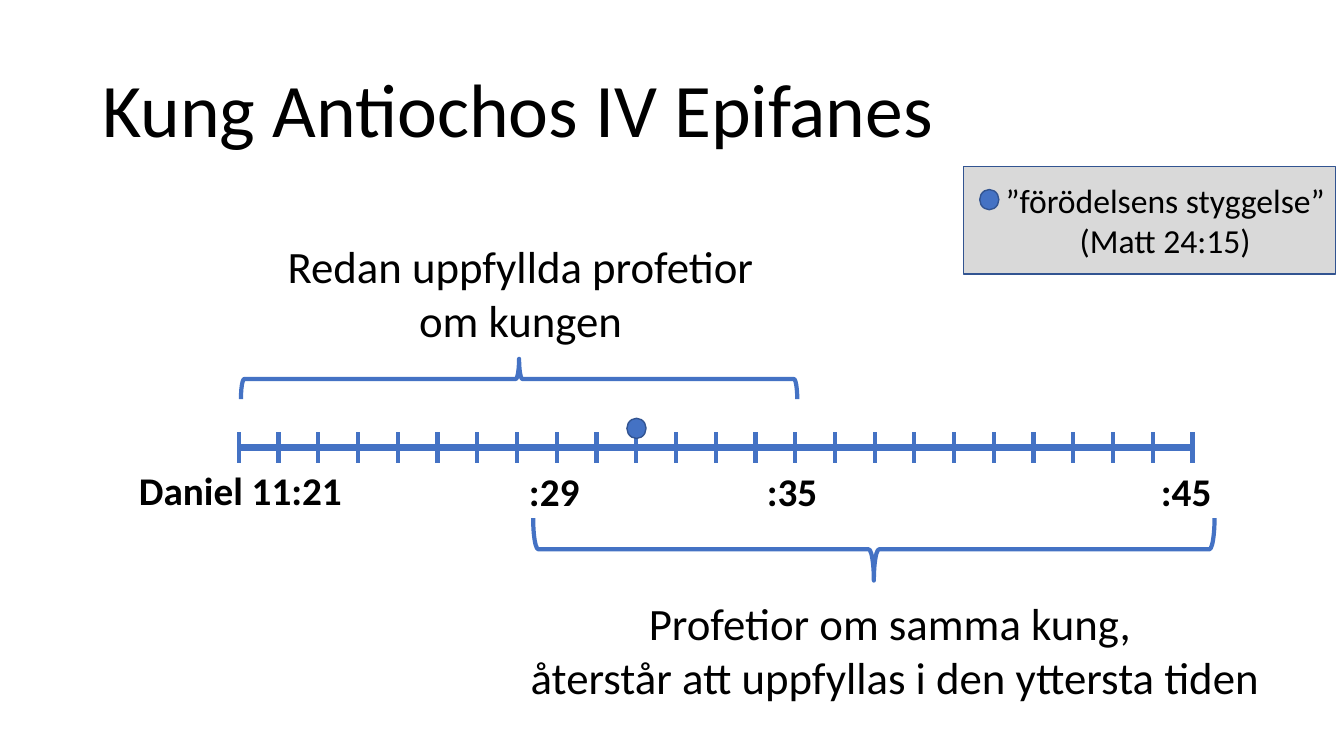
import pptx
import pptx.util
import pptx.dml.color
import pptx.enum.shapes
import pptx.enum.text
import pptx.oxml.ns
import lxml.etree

Pt = pptx.util.Pt
RGBColor = pptx.dml.color.RGBColor
MSO_SHAPE = pptx.enum.shapes.MSO_SHAPE
PP_ALIGN = pptx.enum.text.PP_ALIGN

BLACK = RGBColor(0x00, 0x00, 0x00)
BLUE = RGBColor(0x44, 0x72, 0xC4)
DARK_BLUE = RGBColor(0x32, 0x54, 0x91)
GRAY = RGBColor(0xD9, 0xD9, 0xD9)

FIRST_VERSE, LAST_VERSE = 21, 45
AXIS_LEFT, AXIS_RIGHT, AXIS_Y = 170.6, 851.8, 319.7
VERSE_STEP = (AXIS_RIGHT - AXIS_LEFT) / (LAST_VERSE - FIRST_VERSE)
TICK_HALF = 10.8


def write_text(frame, text, size, bold=False, align=PP_ALIGN.LEFT, spacing=1.0, wrap=True,
               anchor=pptx.enum.text.MSO_ANCHOR.TOP):
    frame.word_wrap = wrap
    frame.auto_size = pptx.enum.text.MSO_AUTO_SIZE.NONE
    frame.vertical_anchor = anchor
    frame.text = text
    for paragraph in frame.paragraphs:
        paragraph.alignment = align
        paragraph.line_spacing = spacing
        paragraph.font.name = "Calibri"
        paragraph.font.size = Pt(size)
        paragraph.font.bold = bold
        paragraph.font.color.rgb = BLACK


presentation = pptx.Presentation()
presentation.slide_width = Pt(960)
presentation.slide_height = Pt(540)
slide = presentation.slides.add_slide(presentation.slide_layouts[5])
shapes = slide.shapes

title = shapes.title
title.left, title.top, title.width, title.height = Pt(66), Pt(28.8), Pt(828), Pt(104.4)
write_text(title.text_frame, "Kung Antiochos IV Epifanes", 54, spacing=0.9,
           anchor=pptx.enum.text.MSO_ANCHOR.MIDDLE)

outlined_shapes = [
    (MSO_SHAPE.RECTANGLE, 688.3, 118.8, 265.7, 77, 0, GRAY, DARK_BLUE, 1),
    (MSO_SHAPE.RIGHT_BRACE, 356.4, 72, 28.8, 397.4, 270, None, BLUE, 3),
    (MSO_SHAPE.LEFT_BRACE, 601.9, 149, 44.6, 486.7, 270, None, BLUE, 3),
]
ticks = [AXIS_LEFT + index * VERSE_STEP for index in range(LAST_VERSE - FIRST_VERSE + 1)]
lines = [(x, AXIS_Y - TICK_HALF, x, AXIS_Y + TICK_HALF, 3) for x in ticks]
lines.append((AXIS_LEFT, AXIS_Y, AXIS_RIGHT, AXIS_Y, 5))

for left, top, right, bottom, weight in lines:
    connector = shapes.add_connector(pptx.enum.shapes.MSO_CONNECTOR.STRAIGHT,
                                     Pt(left), Pt(top), Pt(right), Pt(bottom))
    connector.line.color.rgb = BLUE
    connector.line.width = Pt(weight)
    lxml.etree.SubElement(connector._element.spPr, pptx.oxml.ns.qn("a:effectLst"))

for left, top in [(447.8, 298.8), (699.8, 135.4)]:
    outlined_shapes.append((MSO_SHAPE.OVAL, left, top, 13.7, 14.4, 0, BLUE, DARK_BLUE, 1))

for kind, left, top, width, height, rotation, fill, outline, weight in outlined_shapes:
    shape = shapes.add_shape(kind, Pt(left), Pt(top), Pt(width), Pt(height))
    shape.shadow.inherit = False
    shape.rotation = rotation
    if fill is None:
        shape.fill.background()
    else:
        shape.fill.solid()
        shape.fill.fore_color.rgb = fill
    shape.line.color.rgb = outline
    shape.line.width = Pt(weight)

centered = {"align": PP_ALIGN.CENTER}
verse_label = {"size": 28, "bold": True}
labels = [
    ("”förödelsens styggelse”\n(Matt 24:15)", 709.9, 124.6, 244.8, 65.5, {"size": 24, **centered}),
    ("Daniel 11:21", 92.2, 329.8, 161.3, 41, {"wrap": False, **verse_label}),
    (":29", 370.8, 330.5, 67, 41, verse_label),
    (":35", 540.7, 330.5, 67, 41, verse_label),
    (":45", 822.2, 330.5, 67, 41, verse_label),
    ("Redan uppfyllda profetior om kungen", 175.7, 167, 392.4, 85, {"size": 32, **centered}),
    ("Profetior om samma kung, \nåterstår att uppfyllas i den yttersta tiden",
     369.4, 421.9, 540, 85, {"size": 32, **centered}),
]
for text, left, top, width, height, style in labels:
    box = shapes.add_textbox(Pt(left), Pt(top), Pt(width), Pt(height))
    write_text(box.text_frame, text, **style)

presentation.save("out.pptx")
